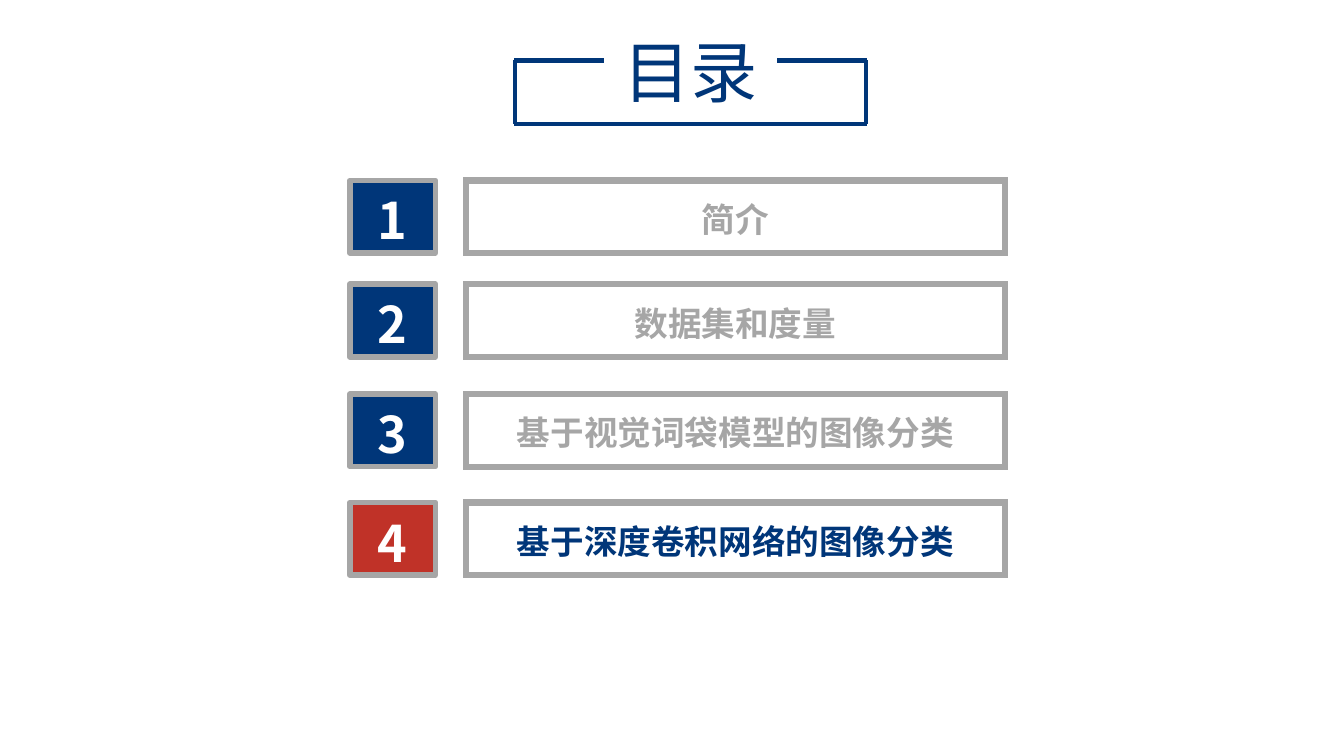
from dataclasses import dataclass

from lxml.etree import SubElement
from pptx import Presentation
from pptx.dml.color import RGBColor
from pptx.enum.shapes import MSO_CONNECTOR as Connector
from pptx.enum.shapes import MSO_SHAPE as Preset
from pptx.enum.text import MSO_ANCHOR as Anchor
from pptx.enum.text import PP_ALIGN as Align
from pptx.oxml.ns import qn
from pptx.shapes.autoshape import Shape
from pptx.shapes.connector import Connector as Line
from pptx.util import Pt

NAVY = RGBColor(0x00, 0x36, 0x79)
RED = RGBColor(0xC0, 0x32, 0x28)
GRAY = RGBColor(0xA6, 0xA6, 0xA6)
WHITE = RGBColor(0xFF, 0xFF, 0xFF)
FONT = "Noto Sans CJK SC"

FRAME_FORMAT = {
    "word_wrap": True,
    "vertical_anchor": Anchor.MIDDLE,
    "margin_left": 0,
    "margin_right": 0,
    "margin_top": 0,
    "margin_bottom": 0,
}

BADGE_LEFT, BADGE_WIDTH = 249.84, 61.2
LABEL_LEFT, LABEL_WIDTH = 332.64, 385.2
ROW_HEIGHT, CAPTION_HEIGHT = 51.84, 36.72

BRACKET_LEFT, BRACKET_RIGHT = 367.2, 619.2
BRACKET_TOP, BRACKET_BOTTOM = 43.2, 88.56
BRACKET_ARM, SIDE_INSET = 64.08, 0.72


@dataclass(frozen=True)
class Box:
    left: float
    top: float
    width: float
    height: float

    def lengths(self) -> list[Pt]:
        return [Pt(v) for v in (self.left, self.top, self.width, self.height)]


@dataclass(frozen=True)
class Segment:
    x1: float
    y1: float
    x2: float
    y2: float


@dataclass(frozen=True)
class Chapter:
    top: float
    title: str
    badge_color: RGBColor = NAVY
    title_color: RGBColor = GRAY


CHAPTERS = [
    Chapter(128.88, "简介"),
    Chapter(203.04, "数据集和度量"),
    Chapter(281.52, "基于视觉词袋模型的图像分类"),
    Chapter(359, "基于深度卷积网络的图像分类", RED, NAVY),
]

SIDE_LEFT, SIDE_RIGHT = BRACKET_LEFT + SIDE_INSET, BRACKET_RIGHT - SIDE_INSET
BRACKET = [
    Segment(BRACKET_RIGHT - BRACKET_ARM, BRACKET_TOP, BRACKET_RIGHT, BRACKET_TOP),
    Segment(BRACKET_LEFT, BRACKET_TOP, BRACKET_LEFT + BRACKET_ARM, BRACKET_TOP),
    Segment(BRACKET_LEFT, BRACKET_BOTTOM, BRACKET_RIGHT, BRACKET_BOTTOM),
    Segment(SIDE_LEFT, BRACKET_TOP, SIDE_LEFT, BRACKET_BOTTOM),
    Segment(SIDE_RIGHT, BRACKET_TOP, SIDE_RIGHT, BRACKET_BOTTOM),
]


def write(holder: Shape, text: str, size: float, color: RGBColor,
          bold: bool = True, spacing: float = 1.1) -> None:
    frame = holder.text_frame
    for name, value in FRAME_FORMAT.items():
        setattr(frame, name, value)
    paragraph = frame.paragraphs[0]
    for name, value in {"alignment": Align.CENTER, "line_spacing": spacing}.items():
        setattr(paragraph, name, value)
    run = paragraph.add_run()
    run.text = text
    for name, value in {"size": Pt(size), "name": FONT, "bold": bold}.items():
        setattr(run.font, name, value)
    run.font.color.rgb = color
    SubElement(run.font._element, qn("a:ea"), typeface=FONT)


def add_rectangle(shapes, box: Box, line_width: float, fill: RGBColor | None = None) -> Shape:
    rectangle = shapes.add_shape(Preset.RECTANGLE, *box.lengths())
    rectangle.shadow.inherit = False
    if fill is None:
        rectangle.fill.background()
    else:
        rectangle.fill.solid()
        rectangle.fill.fore_color.rgb = fill
    rectangle.line.color.rgb = GRAY
    rectangle.line.width = Pt(line_width)
    return rectangle


def add_line(shapes, segment: Segment) -> Line:
    ends = (segment.x1, segment.y1, segment.x2, segment.y2)
    line = shapes.add_connector(Connector.STRAIGHT, *map(Pt, ends))
    line.line.color.rgb = NAVY
    line.line.width = Pt(3)
    SubElement(line._element.spPr, qn("a:effectLst"))
    return line


def add_heading(shapes) -> None:
    group = shapes.add_group_shape().shapes
    heading = group.add_textbox(*Box(419.76, 18, 146.88, 65.52).lengths())
    write(heading, "目录", 48, NAVY, bold=False, spacing=1.0)
    for segment in BRACKET:
        add_line(group, segment)


def add_chapter(shapes, number: int, chapter: Chapter) -> None:
    badge_box = Box(BADGE_LEFT, chapter.top, BADGE_WIDTH, ROW_HEIGHT)
    badge = add_rectangle(shapes, badge_box, 4, chapter.badge_color)
    write(badge, str(number), 36, WHITE)

    group = shapes.add_group_shape().shapes
    label_box = Box(LABEL_LEFT, chapter.top, LABEL_WIDTH, ROW_HEIGHT)
    label = add_rectangle(group, label_box, 4.5)
    SubElement(label.line._get_or_add_ln(), qn("a:miter"), lim="800000")
    caption_top = chapter.top + (ROW_HEIGHT - CAPTION_HEIGHT) / 2
    caption_box = Box(LABEL_LEFT, caption_top, LABEL_WIDTH, CAPTION_HEIGHT)
    caption = group.add_textbox(*caption_box.lengths())
    write(caption, chapter.title, 24, chapter.title_color)


def main() -> None:
    deck = Presentation()
    deck.slide_width, deck.slide_height = Pt(960), Pt(540)
    slide = deck.slides.add_slide(deck.slide_layouts[6])
    add_heading(slide.shapes)
    for number, chapter in enumerate(CHAPTERS, start=1):
        add_chapter(slide.shapes, number, chapter)
    deck.save("out.pptx")


if __name__ == "__main__":
    main()
